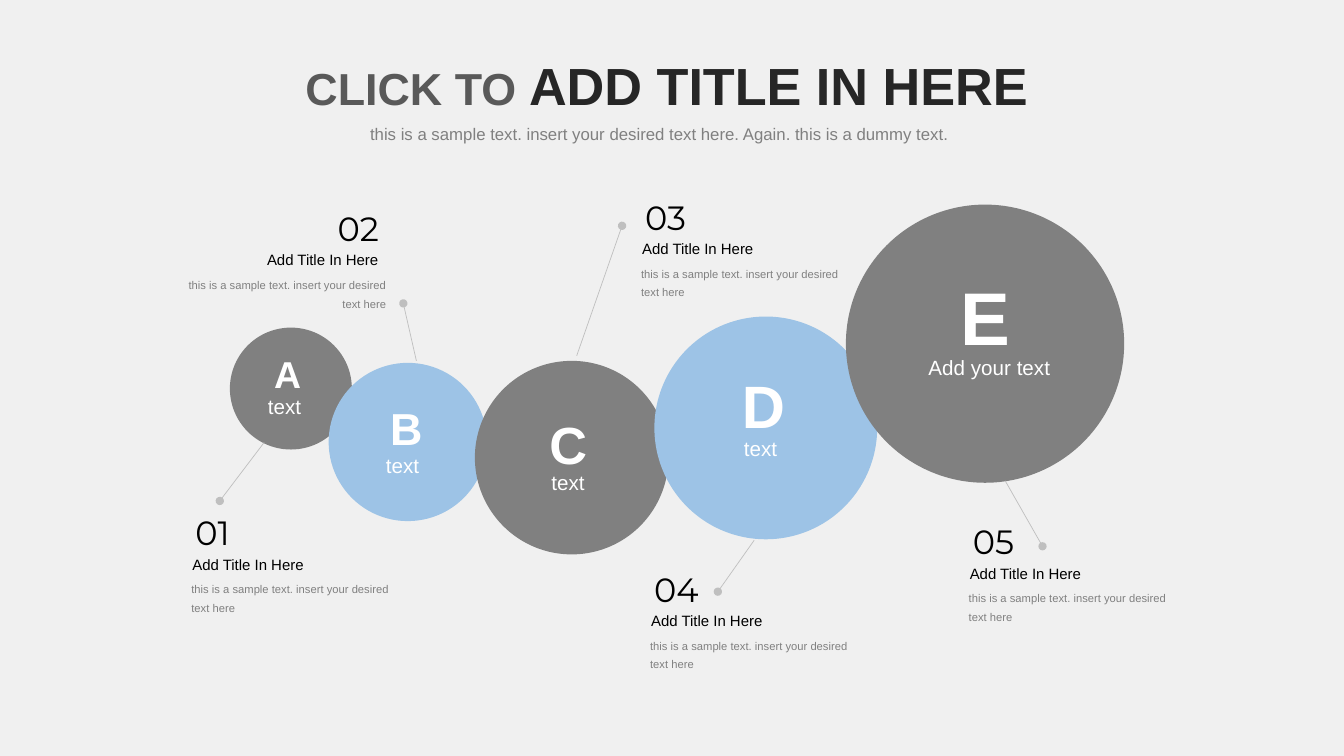
"""Build a slide of five growing, overlapping circles with numbered callouts."""
from dataclasses import dataclass

from lxml import etree
from pptx import Presentation
from pptx import util as u
from pptx.dml.color import RGBColor
from pptx.enum import shapes, text
from pptx.oxml.ns import qn


@dataclass(frozen=True)
class Theme:
    paper: str = "F0F0F0"
    gray: str = "808080"
    blue: str = "9DC3E6"
    white: str = "FFFFFF"
    black: str = "000000"
    lead: str = "595959"
    strong: str = "262626"
    rule: str = "BFBFBF"
    font: str = "Arial"
    digits: str = "Montserrat"
    lead_size: float = 32
    title_size: float = 37.3
    subtitle_size: float = 12
    caption_size: float = 14.7
    number_size: float = 24
    heading_size: float = 10.7
    note_size: float = 8
    note_leading: float = 13.3
    rule_width: float = 0.5


theme = Theme()
CELL = u.Inches(0.1)
COLUMNS, ROWS = 133.3, 75


def cells(*counts):
    return [round(count * CELL) for count in counts]


def write(box, spans, wrap=False, align=text.PP_ALIGN.LEFT, leading=None):
    frame = box.text_frame
    frame.word_wrap = wrap
    frame.auto_size = text.MSO_AUTO_SIZE.SHAPE_TO_FIT_TEXT
    frame.vertical_anchor = text.MSO_ANCHOR.TOP
    para = frame.paragraphs[0]
    para.alignment = align
    para.space_before = u.Pt(0)
    if leading:
        para.line_spacing = u.Pt(leading)
    for words, size, color, bold, font in spans:
        span = para.add_run()
        span.text = words
        span.font.size = u.Pt(size)
        span.font.color.rgb = RGBColor.from_string(color)
        span.font.bold = bold
        span.font.name = font


deck = Presentation()
deck.slide_width, deck.slide_height = cells(COLUMNS, ROWS)
page = deck.slides.add_slide(deck.slide_layouts[0])
page.background.fill.solid()
page.background.fill.fore_color.rgb = RGBColor.from_string(theme.paper)

title, subtitle = page.placeholders
title.left, title.top, title.width, title.height = cells(29.3, 4.8, 74.4, 7.3)
write(title, [("CLICK TO ", theme.lead_size, theme.lead, True, theme.font),
              ("ADD TITLE IN HERE", theme.title_size, theme.strong, True, theme.font)])
subtitle.left, subtitle.top, subtitle.width, subtitle.height = cells(35.7, 11.8, 60.4, 3)
write(subtitle, [("this is a sample text. insert your desired text here. Again. this is a dummy text.",
                  theme.subtitle_size, theme.gray, False, theme.font)])

# Each bubble: left, top, diameter, colour, (letter, size, box), (caption, box)
bubbles = [
    (22.8, 32.5, 12.1, theme.gray, ("A", 26.7, (26.2, 34.3, 4.7, 5.5)), ("text", (25.6, 38.6, 5.4, 3.5))),
    (32.6, 36, 15.7, theme.blue, ("B", 32, (37.7, 39.3, 5.3, 6.4)), ("text", (37.3, 44.4, 5.4, 3.5))),
    (47.1, 35.8, 19.2, theme.gray, ("C", 37.3, (53.5, 40.4, 5.8, 7.3)), ("text", (53.7, 46.1, 5.4, 3.5))),
    (64.9, 31.4, 22.1, theme.blue, ("D", 42.7, (72.6, 36.1, 6.3, 8.2)), ("text", (72.8, 42.8, 5.4, 3.5))),
    (83.9, 20.3, 27.6, theme.gray, ("E", 53.3, (94.3, 26.4, 7, 10)), ("Add your text", (91.1, 34.7, 14.2, 3.5))),
]
for left, top, diameter, color, (letter, size, letter_box), (caption, caption_box) in bubbles:
    group = page.shapes.add_group_shape().shapes
    circle = group.add_shape(shapes.MSO_SHAPE.OVAL, *cells(left, top, diameter, diameter))
    circle.shadow.inherit = False
    circle.fill.solid()
    circle.fill.fore_color.rgb = RGBColor.from_string(color)
    circle.line.fill.background()
    write(group.add_textbox(*cells(*letter_box)), [(letter, size, theme.white, True, theme.font)])
    write(group.add_textbox(*cells(*caption_box)),
          [(caption, theme.caption_size, theme.white, False, theme.font)])

leaders = [
    (26.2, 43.9, 21.8, 49.7),
    (41.3, 35.8, 40, 30.1),
    (57.2, 35.3, 61.7, 22.4),
    (74.8, 53.6, 71.2, 58.7),
    (99.7, 47.7, 103.4, 54.2),
]
for ends in leaders:
    leader = page.shapes.add_connector(shapes.MSO_CONNECTOR.STRAIGHT, *cells(*ends))
    leader.line.color.rgb = RGBColor.from_string(theme.rule)
    leader.line.width = u.Pt(theme.rule_width)
    etree.SubElement(leader.line._get_or_add_ln(), qn("a:tailEnd"), type="oval")
    etree.SubElement(leader._element.spPr, qn("a:effectLst"))

NUMBER_WIDTH, HEADING_WIDTH, NOTE_WIDTH = 6.5, 13.2, 21.7
callouts = [
    ("01", 18.4, 50.3, False),
    ("02", 32.5, 20.1, True),
    ("03", 63, 19, False),
    ("04", 63.9, 55.9, False),
    ("05", 95.5, 51.2, False),
]
for number, left, top, flush_right in callouts:
    heading_left, note_left, align = left - 0.3, left - 0.4, text.PP_ALIGN.LEFT
    if flush_right:
        right = left + NUMBER_WIDTH
        heading_left, note_left = right - 0.3 - HEADING_WIDTH, right + 0.3 - NOTE_WIDTH
        align = text.PP_ALIGN.RIGHT
    group = page.shapes.add_group_shape().shapes
    write(group.add_textbox(*cells(left, top, NUMBER_WIDTH, 5)),
          [(number, theme.number_size, theme.black, False, theme.digits)])
    write(group.add_textbox(*cells(heading_left, top + 4.3, HEADING_WIDTH, 2.8)),
          [("Add Title In Here", theme.heading_size, theme.black, False, theme.font)])
    write(group.add_textbox(*cells(note_left, top + 6.5, NOTE_WIDTH, 4.7)),
          [("this is a sample text. insert your desired text here",
            theme.note_size, theme.gray, False, theme.font)],
          wrap=True, align=align, leading=theme.note_leading)

deck.save("out.pptx")
